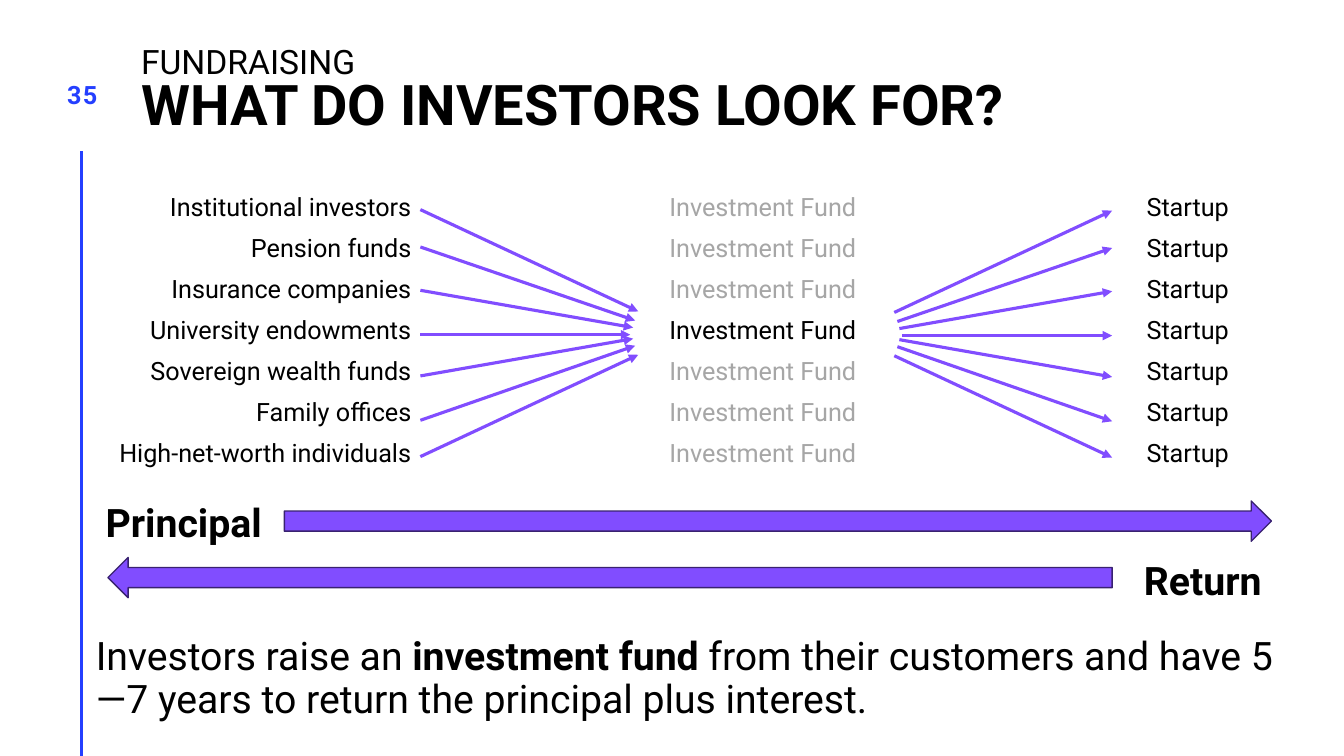
from dataclasses import dataclass

import lxml.etree
import pptx
import pptx.dml.color
import pptx.enum.shapes
import pptx.enum.text
import pptx.oxml.ns
import pptx.util

Align = pptx.enum.text.PP_ALIGN
Anchor = pptx.enum.text.MSO_ANCHOR
qualified = pptx.oxml.ns.qn

SLIDE_WIDTH = pptx.util.Inches(13.33)
SLIDE_HEIGHT = pptx.util.Inches(7.5)
PLAIN_TABLE_STYLE = "{2D5ABB26-0587-4C30-8999-92F81FD0307C}"


@dataclass(frozen=True)
class Theme:
    font: str = "Roboto"
    text: str = "000000"
    muted: str = "A6A6A6"
    accent: str = "243FFF"
    flow: str = "814DFF"
    flow_edge: str = "392270"
    title: int = 40
    body: int = 28
    kicker: int = 24
    small: int = 18


@dataclass(frozen=True)
class Box:
    """A rectangle in percent of the slide's width and height."""
    left: float
    top: float
    width: float
    height: float

    def lengths(self) -> tuple:
        return across(self.left), down(self.top), across(self.width), down(self.height)


@dataclass(frozen=True)
class Ray:
    """A line between an outer party and the fund, in percent of the slide."""
    outer_y: float
    fund_x: float
    fund_y: float


@dataclass(frozen=True)
class Flow:
    label: str
    label_box: Box
    align: Align
    arrow_box: Box
    rotation: int


THEME = Theme()
INVESTORS = (
    "Institutional investors", "Pension funds", "Insurance companies",
    "University endowments", "Sovereign wealth funds", "Family offices",
    "High-net-worth individuals",
)
CHOSEN_FUND = len(INVESTORS) // 2
COLUMN_WIDTHS = (25.28, 50.79, 12.45)
INVESTOR_X = 31.28
MIRROR_SUM = 114.03
STARTUP_DROP = 0.13
RAYS = (
    Ray(27.73, 47.49, 41.2), Ray(32.67, 47.26, 42.4), Ray(38.4, 47.11, 43.33),
    Ray(44.27, 46.89, 44.27),
    Ray(49.73, 47.11, 44.8), Ray(55.6, 47.26, 45.73), Ray(60.4, 47.49, 46.93),
)
FLOWS = (
    Flow("Principal", Box(7.13, 65.2, 14.03, 7.6), Align.LEFT,
         Box(21.16, 66.27, 73.44, 5.33), 0),
    Flow("Return", Box(80.57, 72.93, 14.03, 7.6), Align.RIGHT,
         Box(8.03, 73.73, 74.72, 5.33), 180),
)


def across(percent: float) -> int:
    return round(SLIDE_WIDTH * percent / 100)


def down(percent: float) -> int:
    return round(SLIDE_HEIGHT * percent / 100)


def rgb(value: str) -> pptx.dml.color.RGBColor:
    return pptx.dml.color.RGBColor.from_string(value)


def write_text(paragraph, text: str, *, size: int, color: str = THEME.text,
               bold: bool = False, align: Align = Align.LEFT, spacing: int = 0) -> None:
    """Append one formatted run; spacing is in hundredths of a point."""
    paragraph.alignment = align
    run = paragraph.add_run()
    run.text = text
    run.font.name = THEME.font
    run.font.size = pptx.util.Pt(size)
    run.font.bold = bold
    run.font.color.rgb = rgb(color)
    if spacing:
        run.font._element.set("spc", str(spacing))


def prepare_frame(shape, anchor: Anchor = Anchor.TOP, inset: bool = True):
    """Set up a text frame and return its first paragraph."""
    frame = shape.text_frame
    frame.word_wrap = True
    frame.auto_size = pptx.enum.text.MSO_AUTO_SIZE.NONE
    frame.vertical_anchor = anchor
    if not inset:
        frame.margin_left = frame.margin_right = 0
        frame.margin_top = frame.margin_bottom = 0
    return frame.paragraphs[0]


def place(shape, box: Box) -> None:
    shape.left, shape.top, shape.width, shape.height = box.lengths()


def add_line(shapes, start: tuple[float, float], end: tuple[float, float],
             color: str, width: float, arrow: bool = False) -> None:
    connector = shapes.add_connector(
        pptx.enum.shapes.MSO_CONNECTOR.STRAIGHT,
        across(start[0]), down(start[1]), across(end[0]), down(end[1]))
    connector.line.color.rgb = rgb(color)
    connector.line.width = pptx.util.Pt(width)
    if arrow:
        outline = connector.line._get_or_add_ln()
        lxml.etree.SubElement(outline, qualified("a:tailEnd"), type="triangle")
    lxml.etree.SubElement(connector.element.spPr, qualified("a:effectLst"))


def add_heading(slide) -> None:
    title = slide.shapes.title
    place(title, Box(10.5, -0.53, 82.75, 18.67))
    paragraph = prepare_frame(title, Anchor.BOTTOM, inset=False)
    paragraph.line_spacing = pptx.util.Pt(40)
    write_text(paragraph, "FUNDRAISING", size=THEME.kicker)
    paragraph.add_line_break()
    write_text(paragraph, "WHAT DO INVESTORS LOOK FOR?", size=THEME.title, bold=True)

    number = slide.shapes.add_textbox(*Box(3.98, 10.53, 4.28, 7.6).lengths())
    write_text(prepare_frame(number, inset=False), "35", size=THEME.small,
               color=THEME.accent, bold=True, align=Align.CENTER, spacing=100)


def add_summary(slide) -> None:
    body = slide.placeholders[1]
    place(body, Box(7.13, 84.27, 88.52, 14.53))
    paragraph = prepare_frame(body, inset=False)
    paragraph.line_spacing = 0.9
    paragraph.space_before = pptx.util.Pt(17)
    write_text(paragraph, "Investors raise an ", size=THEME.body)
    write_text(paragraph, "investment fund", size=THEME.body, bold=True)
    write_text(paragraph, " from their customers and have 5—7 years to return "
               "the principal plus interest.", size=THEME.body)
    properties = paragraph._p.get_or_add_pPr()
    properties.set("marL", "0")
    properties.set("indent", "0")
    lxml.etree.SubElement(properties, qualified("a:buNone"))


def add_parties_table(slide) -> None:
    frame = slide.shapes.add_table(len(INVESTORS), len(COLUMN_WIDTHS),
                                   *Box(6.08, 24.93, 88.52, 37.87).lengths())
    table = frame.table
    table.first_row = table.horz_banding = False
    next(frame.element.iter(qualified("a:tableStyleId"))).text = PLAIN_TABLE_STYLE
    for column, width in zip(table.columns, COLUMN_WIDTHS):
        column.width = across(width)
    for row, investor in enumerate(INVESTORS):
        fund_color = THEME.text if row == CHOSEN_FUND else THEME.muted
        entries = ((investor, Align.RIGHT, THEME.text),
                   ("Investment Fund", Align.CENTER, fund_color),
                   ("Startup", Align.CENTER, THEME.text))
        for column, (text, align, color) in enumerate(entries):
            cell = table.cell(row, column)
            cell.fill.background()
            write_text(cell.text_frame.paragraphs[0], text,
                       size=THEME.small, color=color, align=align)


def add_fans(slide) -> None:
    """Draw the rays into the fund and their mirrored rays out to the startups."""
    inflow = slide.shapes.add_group_shape().shapes
    outflow = slide.shapes.add_group_shape().shapes
    for ray in RAYS:
        add_line(inflow, (INVESTOR_X, ray.outer_y), (ray.fund_x, ray.fund_y),
                 THEME.flow, 2.25, arrow=True)
        add_line(outflow, (MIRROR_SUM - ray.fund_x, ray.fund_y + STARTUP_DROP),
                 (MIRROR_SUM - INVESTOR_X, ray.outer_y + STARTUP_DROP),
                 THEME.flow, 2.25, arrow=True)


def add_flow(shapes, flow: Flow) -> None:
    arrow = shapes.add_shape(pptx.enum.shapes.MSO_SHAPE.RIGHT_ARROW,
                             *flow.arrow_box.lengths())
    arrow.rotation = flow.rotation
    arrow.shadow.inherit = False
    arrow.fill.solid()
    arrow.fill.fore_color.rgb = rgb(THEME.flow)
    arrow.line.color.rgb = rgb(THEME.flow_edge)
    arrow.line.width = pptx.util.Pt(1)
    label = shapes.add_textbox(*flow.label_box.lengths())
    write_text(prepare_frame(label), flow.label, size=THEME.body,
               bold=True, align=flow.align)


def main() -> None:
    presentation = pptx.Presentation()
    presentation.slide_width = SLIDE_WIDTH
    presentation.slide_height = SLIDE_HEIGHT
    slide = presentation.slides.add_slide(presentation.slide_layouts[1])
    add_line(slide.shapes, (6.08, 20), (6.08, 100), THEME.accent, 2)
    add_heading(slide)
    add_summary(slide)
    add_parties_table(slide)
    add_fans(slide)
    flow_shapes = slide.shapes.add_group_shape().shapes
    for flow in FLOWS:
        add_flow(flow_shapes, flow)
    presentation.save("out.pptx")


if __name__ == "__main__":
    main()
